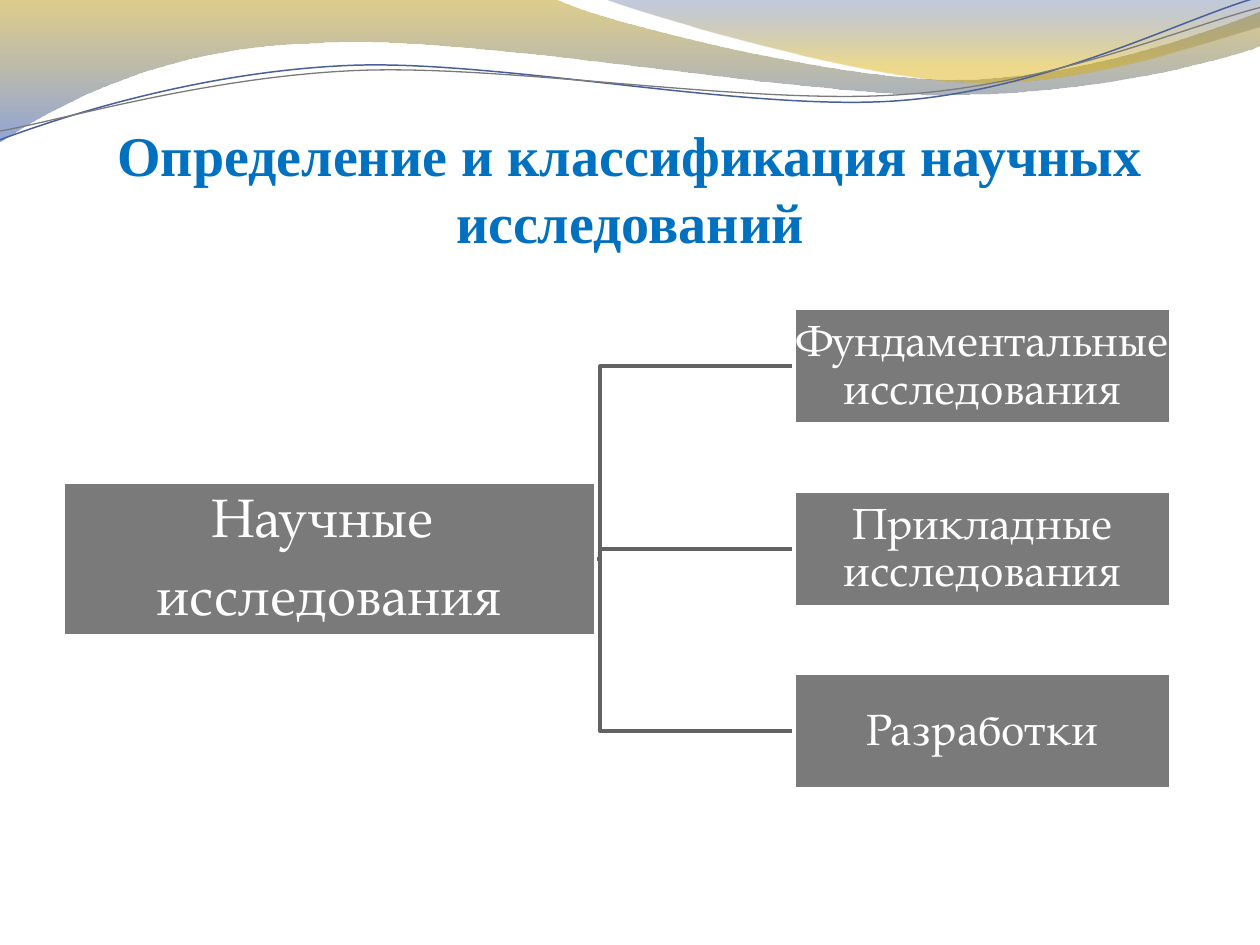
from lxml import etree
from pptx import Presentation
from pptx import util as u
from pptx.dml.color import RGBColor
from pptx.enum import shapes, text
from pptx.oxml.ns import qn

WIDTH, HEIGHT = 10, 7.5
FONT = "TeX Gyre Pagella"
GOLD_WAVE = [(0, 0), (4.4, -0.01),
             (4.76, 0.17, 6.64, 0.63, 7.58, 0.63), (8.53, 0.63, 9.58, 0.26, 10, 0.09),
             (10.01, 0.36), (9.83, 0.44, 8.7, 0.76, 7.46, 0.75),
             (6.22, 0.75, 3.82, 0.28, 2.57, 0.34), (1.29, 0.36, 0.46, 0.83, -0.01, 1.13)]
BLUE_WAVE = [(4.79, -0.01), (5.09, 0.11, 6.82, 0.62, 7.69, 0.65),
             (8.56, 0.69, 9.61, 0.32, 10, 0.21), (10, 0)]
BLUE_LINE = [(0, 1.11), (0.48, 0.93, 1.58, 0.57, 2.77, 0.52),
             (3.95, 0.47, 5.93, 0.89, 7.13, 0.8), (8.33, 0.71, 9.38, 0.15, 9.98, -0.02)]
GREY_LINE = [(0, 1.04), (0.47, 0.96, 1.64, 0.61, 2.83, 0.56),
             (4.03, 0.51, 5.97, 0.84, 7.17, 0.75), (8.36, 0.67, 9.41, 0.21, 10, 0.06)]


def color(hex_string):
    """Turn a hex string into a colour."""
    return RGBColor.from_string(hex_string)


def add_path(slide, path, closed=False):
    """Add a freeform whose parts are line ends or cubic curves, in inches."""
    ends = [(u.Inches(part[-2]), u.Inches(part[-1])) for part in path]
    builder = slide.shapes.build_freeform(*ends[0])
    builder.add_line_segments(ends[1:], close=closed)
    sp = builder.convert_to_shape()
    sp.shadow.inherit = False
    segments = list(sp._element.spPr.iter(qn("a:lnTo")))
    for segment, part in zip(segments, path[1:]):
        if len(part) == 6:
            segment.tag = qn("a:cubicBezTo")
            for i in (0, 2):
                pt = etree.Element(qn("a:pt"))
                pt.set("x", str(u.Inches(part[i]) - sp.left))
                pt.set("y", str(u.Inches(part[i + 1]) - sp.top))
                segment.insert(i // 2, pt)
    return sp


def add_line(slide, path, hex_string, width):
    """Add an unfilled line along a path."""
    sp = add_path(slide, path)
    sp.fill.background()
    sp.line.color.rgb = color(hex_string)
    sp.line.width = u.Pt(width)


def add_wave(slide, path, stops):
    """Add a wave with a translucent gradient running downwards."""
    sp = add_path(slide, path, closed=True)
    sp.line.fill.background()
    sp.fill.gradient()
    sp.fill.gradient_angle = 270
    for stop, (position, hex_string, _) in zip(sp.fill.gradient_stops, stops):
        stop.position = position
        stop.color.rgb = color(hex_string)
    for node, (_, _, opacity) in zip(sp._element.spPr.iter(qn("a:srgbClr")), stops):
        etree.SubElement(node, qn("a:alpha")).set("val", str(opacity * 1000))


def add_header(slide):
    """Draw the waves and the two curves along the top edge."""
    add_wave(slide, GOLD_WAVE, [(0, "B69000", 45), (1, "3359B7", 55)])
    add_wave(slide, BLUE_WAVE, [(0, "324C8D", 30), (0.8, "D9AC00", 45)])
    add_line(slide, BLUE_LINE, "48609B", 0.85)
    add_line(slide, GREY_LINE, "7A7A7A", 0.75)


def add_title(slide, title, box):
    """Place and format the title placeholder."""
    sp = slide.shapes.title
    sp.left, sp.top, sp.width, sp.height = map(u.Inches, box)
    tf = sp.text_frame
    tf.text = title
    tf.word_wrap = True
    tf.auto_size = text.MSO_AUTO_SIZE.NONE
    tf.vertical_anchor = text.MSO_ANCHOR.BOTTOM
    tf.margin_left = tf.margin_right = tf.margin_bottom = 0
    tf.margin_top = u.Inches(0.05)
    p = tf.paragraphs[0]
    p.alignment = text.PP_ALIGN.CENTER
    p.line_spacing = 1
    p.font.name, p.font.size, p.font.bold = "Times New Roman", u.Pt(32), True
    p.font.color.rgb = color("0070C0")


def add_node(slide, lines, box, size):
    """Add a grey box with centred text."""
    sp = slide.shapes.add_shape(shapes.MSO_SHAPE.RECTANGLE, *map(u.Inches, box))
    sp.shadow.inherit = False
    sp.fill.solid()
    sp.fill.fore_color.rgb = color("7A7A7A")
    sp.line.color.rgb = color("FFFFFF")
    sp.line.width = u.Pt(2)
    tf = sp.text_frame
    tf.text = "\n".join(lines)
    tf.word_wrap = True
    tf.vertical_anchor = text.MSO_ANCHOR.MIDDLE
    tf.margin_left = tf.margin_right = u.Inches(0.01)
    tf.margin_top = tf.margin_bottom = u.Inches(0.02)
    for p in tf.paragraphs:
        p.alignment = text.PP_ALIGN.CENTER
        p.line_spacing = 0.9
        p.space_after = u.Pt(round(size * 0.35))
        p.font.name, p.font.size = FONT, u.Pt(size)
        p.font.color.rgb = color("FFFFFF")


def add_tree(slide, root, children, box):
    """Draw a root on the left joined to a column of children."""
    x, y, w, h = box
    root_w, root_h = 0.481 * w, 0.32 * h
    child_w, child_h = 0.34 * w, 0.24 * h
    pitch = (h - child_h) / (len(children) - 1)
    middle = y + 0.522 * h
    start, end = x + 0.31 * w, x + w - child_w
    bend = (start + end) / 2
    tops = [y + i * pitch for i in range(len(children))]
    for top in reversed(tops):
        centre = top + child_h / 2
        add_line(slide, [(start, middle), (bend, middle), (bend, centre), (end, centre)],
                 "626262", 2)
    add_node(slide, root, (x, middle - root_h / 2, root_w, root_h), 31)
    for top, child in zip(tops, children):
        add_node(slide, [child], (end, top, child_w, child_h), 25)


def main():
    """Build the slide and save it."""
    prs = Presentation()
    prs.slide_width, prs.slide_height = u.Inches(WIDTH), u.Inches(HEIGHT)
    slide = prs.slides.add_slide(prs.slide_layouts[5])
    add_header(slide)
    add_title(slide, "Определение и классификация научных исследований",
              (0.05 * WIDTH, 0.77, 0.9 * WIDTH, 1.25))
    add_tree(slide, ["Научные ", "исследования"],
             ["Фундаментальные исследования", "Прикладные исследования", "Разработки"],
             (0.05 * WIDTH, 2.45, 8.79, 3.81))
    prs.save("out.pptx")


if __name__ == "__main__":
    main()
